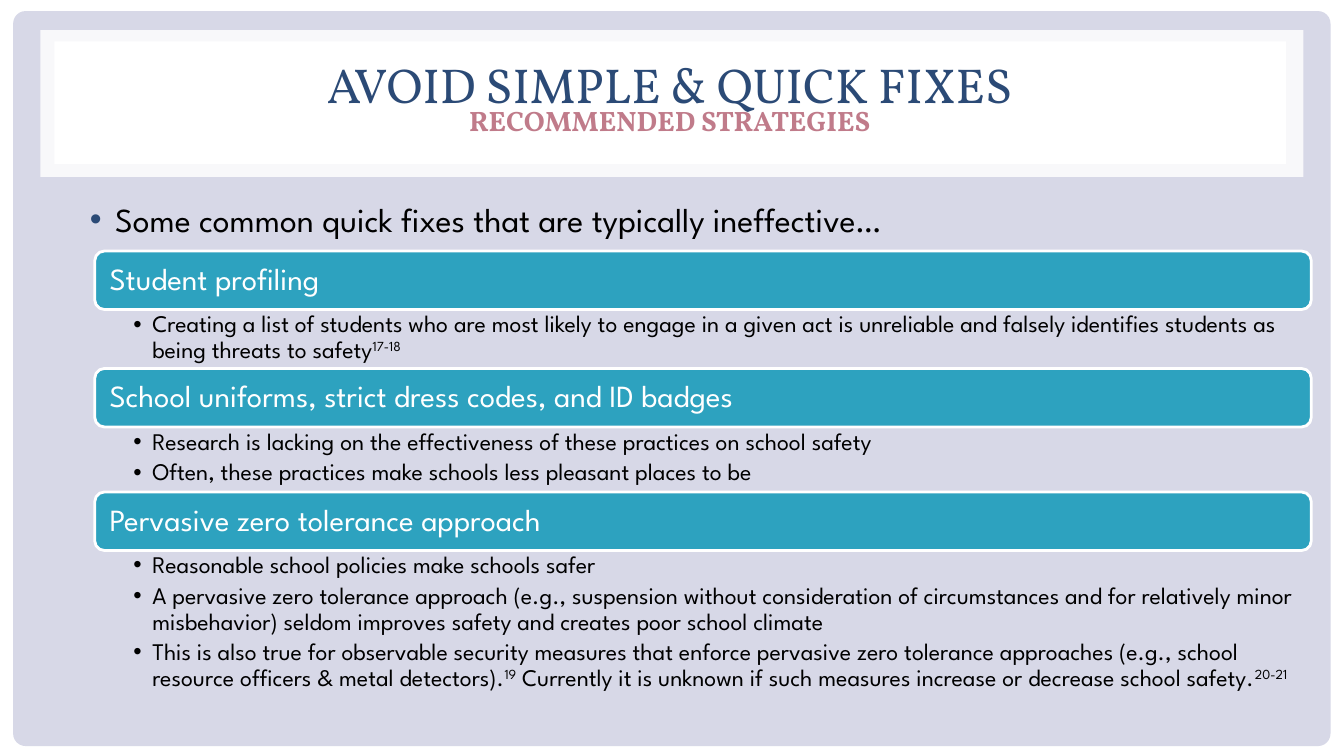
from pptx import Presentation
from pptx.dml.color import RGBColor
from pptx.enum.shapes import MSO_SHAPE as Preset
from pptx.enum.text import MSO_ANCHOR as Anchor, PP_ALIGN as Align
from pptx.oxml.ns import qn
from pptx.util import Pt
from lxml.etree import SubElement

WHITE = RGBColor(0xFF, 0xFF, 0xFF)
BLACK = RGBColor(0, 0, 0)
LAVENDER = RGBColor(0xD7, 0xD8, 0xE7)
NAVY = RGBColor(0x2B, 0x4A, 0x76)
ROSE = RGBColor(0xC0, 0x7B, 0x8A)
TEAL = RGBColor(0x2D, 0xA2, 0xBF)

HEADING_FONT = "Vollkorn"
BODY_FONT = "League Spartan"
TITLE = {"name": HEADING_FONT, "size": Pt(35), "color": NAVY}
SUBTITLE = {"name": HEADING_FONT, "size": Pt(20), "color": ROSE, "bold": True}
LEAD = {"name": BODY_FONT, "size": Pt(24), "color": BLACK}
FIX = {"name": BODY_FONT, "size": Pt(22), "color": WHITE}
REASON = {"name": BODY_FONT, "size": Pt(17), "color": BLACK}

LEFT, WIDTH, BAR_HEIGHT = 67.7, 869, 41.8

FIXES = [
    (179.3, 42.5, "Student profiling", [
        ["Creating a list of students who are most likely to engage in a given act is "
         "unreliable and falsely identifies students as being threats to safety", "17-18"],
    ]),
    (263.2, 46.8, "School uniforms, strict dress codes, and ID badges", [
        ["Research is lacking on the effectiveness of these practices on school safety"],
        ["Often, these practices make schools less pleasant places to be"],
    ]),
    (351.4, 125.3, "Pervasive zero tolerance approach", [
        ["Reasonable school policies make schools safer"],
        ["A pervasive zero tolerance approach (e.g., suspension without consideration of "
         "circumstances and for relatively minor misbehavior) seldom improves safety and "
         "creates poor school climate"],
        ["This is also true for observable security measures that enforce pervasive zero "
         "tolerance approaches (e.g., school resource officers & metal detectors).", "19",
         " Currently it is unknown if such measures increase or decrease school safety.",
         "20-21"],
    ]),
]


class SlideBuilder:
    """Draws panels, bars and bulleted text on one slide, in points."""

    def __init__(self, slide):
        self.slide = slide

    def panel(self, box, fill, preset=Preset.RECTANGLE, corner=None, opacity=None, outline=None):
        panel = self.slide.shapes.add_shape(preset, *map(Pt, box))
        panel.shadow.inherit = False
        panel.fill.solid()
        panel.fill.fore_color.rgb = fill
        if corner is not None:
            panel.adjustments[0] = corner
        if opacity is not None:
            color = panel.fill._xPr.find(qn("a:solidFill"))[0]
            SubElement(color, qn("a:alpha")).set("val", str(opacity * 1000))
        if outline is None:
            panel.line.fill.background()
        else:
            panel.line.color.rgb = outline
            panel.line.width = Pt(2)
        return panel

    def frame(self, holder, insets, anchor=Anchor.TOP):
        frame = holder.text_frame
        left, top, right, bottom = map(Pt, insets)
        layout = {"word_wrap": True, "vertical_anchor": anchor, "margin_left": left,
                  "margin_top": top, "margin_right": right, "margin_bottom": bottom}
        for name, value in layout.items():
            setattr(frame, name, value)
        return frame

    def text_box(self, box, insets=(7.2, 3.6, 7.2, 3.6), anchor=Anchor.TOP):
        return self.frame(self.slide.shapes.add_textbox(*map(Pt, box)), insets, anchor)

    def paragraph(self, frame, first=True, **spacing):
        paragraph = frame.paragraphs[0] if first else frame.add_paragraph()
        for name, value in spacing.items():
            setattr(paragraph, name, value)
        return paragraph

    def run(self, paragraph, words, style, raised=False):
        run = paragraph.add_run()
        run.text = words
        for name, value in style.items():
            if name == "color":
                run.font.color.rgb = value
            else:
                setattr(run.font, name, value)
        if raised:
            run._r.get_or_add_rPr().set("baseline", "30000")

    def bullet(self, paragraph, indent, hanging, color):
        props = paragraph._p.get_or_add_pPr()
        props.set("marL", str(Pt(indent)))
        props.set("indent", str(-Pt(hanging)))
        tint = SubElement(props, qn("a:buClr"))
        SubElement(tint, qn("a:srgbClr")).set("val", str(color))
        SubElement(props, qn("a:buFont")).set("typeface", "Arial")
        SubElement(props, qn("a:buChar")).set("char", "•")

    def fix(self, top, reasons_height, name, reasons):
        bar = self.panel((LEFT, top, WIDTH, BAR_HEIGHT), TEAL,
                         Preset.ROUNDED_RECTANGLE, outline=WHITE)
        label = self.frame(bar, (8.6, 6.5, 8.6, 6.5), Anchor.MIDDLE)
        self.run(self.paragraph(label, alignment=Align.LEFT, line_spacing=0.9), name, FIX)
        details = self.text_box((LEFT, top + BAR_HEIGHT, WIDTH, reasons_height),
                                (27.6, 2, 12.2, 2))
        for index, parts in enumerate(reasons):
            reason = self.paragraph(details, index == 0, line_spacing=0.9, space_after=Pt(3.5))
            self.bullet(reason, 13.5, 13.5, BLACK)
            for position, words in enumerate(parts):
                self.run(reason, words, REASON, raised=position % 2 == 1)


def main():
    deck = Presentation()
    deck.slide_width, deck.slide_height = Pt(960), Pt(540)
    slide = deck.slides.add_slide(deck.slide_layouts[6])
    builder = SlideBuilder(slide)

    slide.background.fill.solid()
    slide.background.fill.fore_color.rgb = LAVENDER
    builder.panel((0, 0, 960, 540), WHITE)
    builder.panel((9.4, 7.9, 941, 525), LAVENDER, Preset.ROUNDED_RECTANGLE, corner=0.017)
    builder.panel((28.8, 21.6, 902.2, 104.7), WHITE, opacity=83)
    builder.panel((38.9, 29.5, 879.8, 87.8), WHITE)

    heading = builder.paragraph(
        builder.text_box((44.6, 32.4, 867.6, 82), anchor=Anchor.MIDDLE),
        alignment=Align.CENTER, line_spacing=0.72)
    builder.run(heading, "AVOID SIMPLE & QUICK FIXES", TITLE)
    heading.add_line_break()
    builder.run(heading, "RECOMMENDED STRATEGIES", SUBTITLE)

    lead = builder.paragraph(builder.text_box((48.2, 138.2, 864, 344.2)), space_before=Pt(4.8))
    builder.bullet(lead, 27, 18, NAVY)
    builder.run(lead, "Some common quick fixes that are typically ineffective…", LEAD)

    for fix in FIXES:
        builder.fix(*fix)

    deck.save("out.pptx")


if __name__ == "__main__":
    main()
